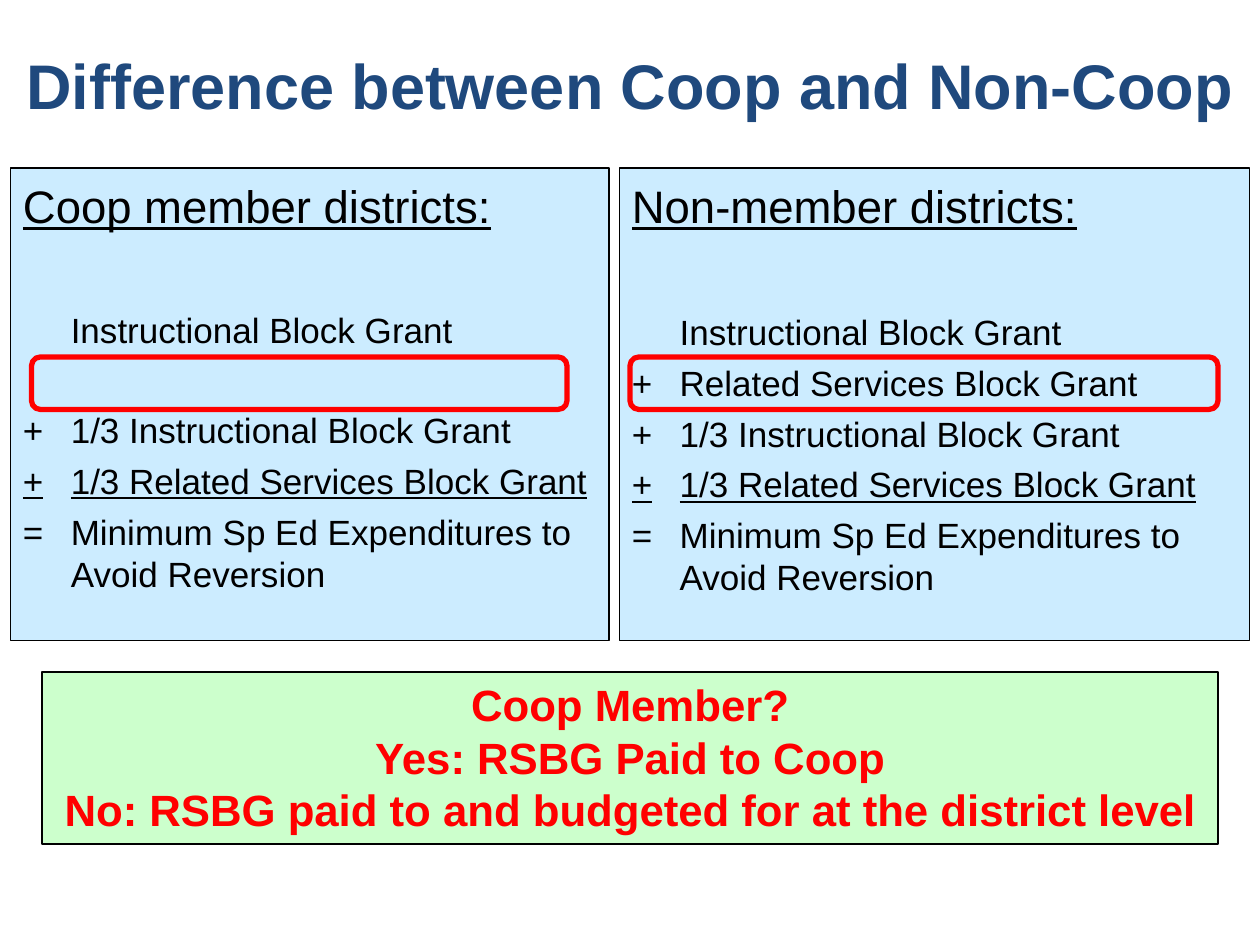
from dataclasses import dataclass
from typing import Optional

from pptx import Presentation
from pptx.dml.color import RGBColor
from pptx.enum.shapes import MSO_SHAPE as Preset
from pptx.enum.text import MSO_ANCHOR as Anchor, PP_ALIGN as Align
from pptx.util import Inches, Pt

# The slide is a grid of 120 columns by 90 rows
SLIDE_WIDTH, SLIDE_HEIGHT = Inches(10), Inches(7.5)
COLUMN, ROW = SLIDE_WIDTH / 120, SLIDE_HEIGHT / 90
FONT = "Arial"
COLORS = {
    "title": "1F497D",
    "panel": "CCECFF",
    "summary": "CCFFCC",
    "text": "000000",
    "accent": "FF0000",
}


@dataclass
class Box:
    column: float
    row: float
    columns: float
    rows: float

    def emu(self) -> tuple[int, int, int, int]:
        return (round(self.column * COLUMN), round(self.row * ROW),
                round(self.columns * COLUMN), round(self.rows * ROW))


@dataclass
class Line:
    text: str
    size: float = 20
    before: float = 5
    underline: bool = False
    bold: bool = False
    color: str = "text"


@dataclass
class Panel:
    box: Box
    lines: list[Line]
    highlight: Box


def rgb(name: str) -> RGBColor:
    return RGBColor.from_string(COLORS[name])


def add_box(slide, box: Box, fill: Optional[str], line: str, width: float,
            preset=Preset.RECTANGLE):
    shape = slide.shapes.add_shape(preset, *box.emu())
    shape.shadow.inherit = False
    if fill:
        shape.fill.solid()
        shape.fill.fore_color.rgb = rgb(fill)
    else:
        shape.fill.background()
    shape.line.color.rgb = rgb(line)
    shape.line.width = Pt(width)
    return shape


def write_lines(shape, lines: list[Line], align=Align.LEFT, anchor=Anchor.TOP,
                hanging: float = 0) -> None:
    frame = shape.text_frame
    frame.word_wrap = True
    frame.vertical_anchor = anchor
    for index, line in enumerate(lines):
        paragraph = frame.paragraphs[0] if index == 0 else frame.add_paragraph()
        paragraph.alignment = align
        paragraph.space_before = Pt(line.before)
        if hanging:
            properties = paragraph._p.get_or_add_pPr()
            properties.set("marL", str(Inches(hanging)))
            properties.set("indent", str(-Inches(hanging)))
        run = paragraph.add_run()
        run.text = line.text
        run.font.name = FONT
        run.font.size = Pt(line.size)
        run.font.bold = line.bold
        run.font.underline = line.underline
        run.font.color.rgb = rgb(line.color)


def heading(text: str) -> Line:
    return Line(text, size=26, before=0, underline=True)


def shared_lines(gap: float) -> list[Line]:
    return [
        Line("+\t1/3 Instructional Block Grant", before=gap),
        Line("+\t1/3 Related Services Block Grant", underline=True),
        Line("=\tMinimum Sp Ed Expenditures to Avoid Reversion"),
    ]


PANELS = [
    Panel(Box(1, 16, 57, 45),
          [heading("Coop member districts:"),
           Line("\tInstructional Block Grant", before=43.5),
           *shared_lines(gap=33)],
          Box(3, 34, 51, 5)),
    Panel(Box(59, 16, 60, 45),
          [heading("Non-member districts:"),
           Line("\tInstructional Block Grant", before=44.5),
           Line("+\tRelated Services Block Grant"),
           *shared_lines(gap=5)],
          Box(60, 34, 56, 5)),
]
SUMMARY = ["Coop Member?", "Yes: RSBG Paid to Coop",
           "No: RSBG paid to and budgeted for at the district level"]


def main() -> None:
    presentation = Presentation()
    presentation.slide_width, presentation.slide_height = SLIDE_WIDTH, SLIDE_HEIGHT
    slide = presentation.slides.add_slide(presentation.slide_layouts[6])

    # District panels
    for panel in PANELS:
        shape = add_box(slide, panel.box, "panel", "text", 0.75)
        shape.text_frame.margin_top = Inches(0.08)
        write_lines(shape, panel.lines, hanging=0.38)

    # Summary
    summary = add_box(slide, Box(4, 64, 112, 16.4), "summary", "text", 1.5)
    write_lines(summary, [Line(text, 25, 0, bold=True, color="accent")
                          for text in SUMMARY], Align.CENTER)

    # Outlines around the related services row
    for panel in PANELS:
        add_box(slide, panel.highlight, None, "accent", 3, Preset.ROUNDED_RECTANGLE)

    # Title
    title = slide.shapes.add_textbox(*Box(1, 1, 118, 14).emu())
    write_lines(title, [Line("Difference between Coop and Non-Coop", 36, 0,
                             bold=True, color="title")],
                Align.CENTER, Anchor.MIDDLE)

    presentation.save("out.pptx")


if __name__ == "__main__":
    main()
